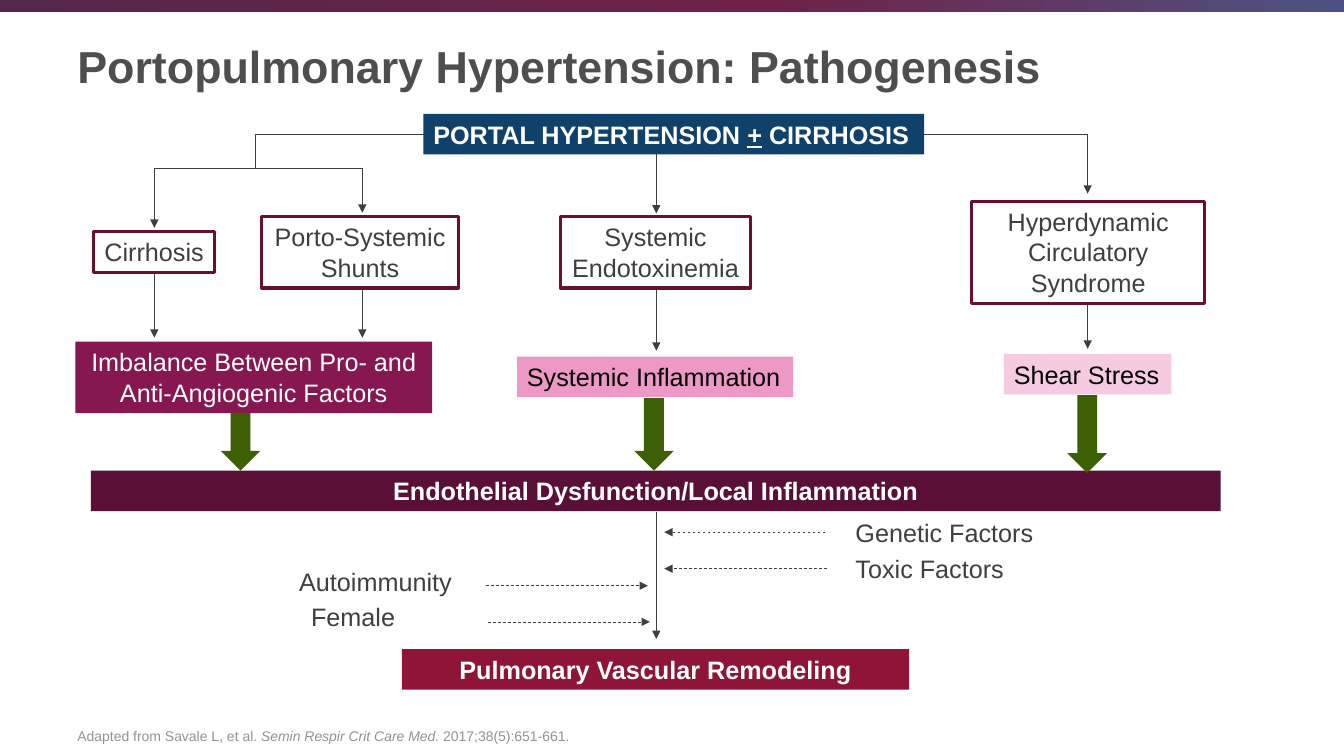
from copy import deepcopy
from pptx import Presentation
from pptx.dml.color import RGBColor
from pptx.enum.dml import MSO_LINE
from pptx.enum.shapes import MSO_CONNECTOR, MSO_SHAPE
from pptx.enum.text import MSO_ANCHOR, PP_ALIGN
from pptx.oxml.ns import qn
from pptx.util import Cm, Pt
from lxml.etree import SubElement

HUES = {
    "white": "FFFFFF", "black": "000000", "title": "4D4E4D", "text": "3F3F3F",
    "note": "939393", "frame": "6B1029", "navy": "10416A", "plum": "861751",
    "pink": "EE98C5", "pale": "F6CBE2", "wine": "590F36", "red": "8E1537",
    "green": "3E6004", "bar1": "54284B", "bar2": "6F2147", "bar3": "4D5282",
}
RGB = {name: RGBColor.from_string(code) for name, code in HUES.items()}

deck = Presentation()
deck.slide_width, deck.slide_height = Cm(33.87), Cm(19.05)
slide = deck.slides.add_slide(deck.slide_layouts[6])
shapes = slide.shapes


def write(text, at, size=18, color="text", bold=False, fill=None, frame=None,
          center=False, wrap=True, anchor=MSO_ANCHOR.TOP):
    """Text is a string, or a list of (words, style) with style "", "i" or "u"."""
    area = [Cm(n) for n in at]
    if fill or frame:
        box = shapes.add_shape(MSO_SHAPE.RECTANGLE, *area)
        box.shadow.inherit = False
    else:
        box = shapes.add_textbox(*area)
    if fill:
        box.fill.solid()
        box.fill.fore_color.rgb = RGB[fill]
    else:
        box.fill.background()
    if frame:
        box.line.color.rgb = RGB[frame]
        box.line.width = Pt(2.25)
    else:
        box.line.fill.background()
    body = box.text_frame
    body.word_wrap = wrap
    body.vertical_anchor = anchor
    para = body.paragraphs[0]
    para.alignment = PP_ALIGN.CENTER if center else PP_ALIGN.LEFT
    for words, style in [(text, "")] if isinstance(text, str) else text:
        run = para.add_run()
        run.text = words
        font = run.font
        font.name, font.size, font.bold = "Arial", Pt(size), bold
        font.italic, font.underline = style == "i", style == "u"
        font.color.rgb = RGB[color]


def link(x1, y1, x2, y2, head=True, dash=False):
    line = shapes.add_connector(MSO_CONNECTOR.STRAIGHT, Cm(x1), Cm(y1), Cm(x2), Cm(y2))
    line.line.color.rgb = RGB["text"]
    line.line.width = Pt(0.5)
    if dash:
        line.line.dash_style = MSO_LINE.DASH
    props = line._element.spPr
    if head:
        SubElement(props.find(qn("a:ln")), qn("a:tailEnd"), type="triangle")
    SubElement(props, qn("a:effectLst"))


# Top bar with three gradient stops
bar = shapes.add_shape(MSO_SHAPE.RECTANGLE, 0, 0, deck.slide_width, Cm(0.3))
bar.shadow.inherit = False
bar.line.fill.background()
bar.fill.gradient()
bar.fill.gradient_angle = 0
stops = bar._element.spPr.find(qn("a:gradFill")).find(qn("a:gsLst"))
stops.insert(1, deepcopy(stops[0]))
for stop, name, place in zip(bar.fill.gradient_stops, ("bar1", "bar2", "bar3"), (0, 0.57, 1)):
    stop.color.rgb = RGB[name]
    stop.position = place

# Title
write("Portopulmonary Hypertension: Pathogenesis", (1.7, 0.56, 29.85, 2.18),
      size=32, color="title", bold=True, anchor=MSO_ANCHOR.MIDDLE)

# Branches from the top box: column centers and shared heights
LEFT, SHUNT, MID, RIGHT, FORK = 3.89, 9.13, 16.54, 27.41, 6.43
TOP, SPLIT, ROW = 3.38, 4.24, 1.02
for ends in [(22.1, TOP, RIGHT, TOP), (10.72, TOP, FORK, TOP),
             (FORK, TOP, FORK, SPLIT), (LEFT, SPLIT, SHUNT, SPLIT)]:
    link(*ends, head=False)

# Downward arrows
for x, start, end in [
    (LEFT, SPLIT, 5.74), (LEFT, 6.88, 8.51),
    (SHUNT, SPLIT, 5.36), (SHUNT, 7.24, 8.51),
    (MID, 3.78, 5.38), (MID, 7.26, 8.84), (MID, 12.9, 16.1),
    (RIGHT, TOP, 4.88), (RIGHT, 7.65, 8.79),
]:
    link(x, start, x, end)

# Top box
write([("PORTAL HYPERTENSION ", ""), ("+", "u"), (" CIRRHOSIS", "")],
      (10.67, 2.87, 12.62, ROW), color="white", bold=True, fill="navy", wrap=False)

# Framed conditions
for text, at, wrap in [
    ("Cirrhosis", (2.36, 5.84, 3.05, ROW), False),
    ("Porto-Systemic Shunts", (6.6, 5.46, 4.95, 1.8), True),
    ("Systemic Endotoxinemia", (14.12, 5.46, 4.8, 1.8), True),
    ("Hyperdynamic Circulatory Syndrome", (24.49, 5.08, 5.87, 2.57), True),
]:
    write(text, at, frame="frame", center=True, wrap=wrap)

# Mechanisms
write("Imbalance Between Pro- and Anti-Angiogenic Factors", (1.9, 8.61, 8.99, 1.8),
      color="white", fill="plum", center=True)
write("Systemic Inflammation", (13.03, 8.99, 6.96, ROW),
      color="black", fill="pink", wrap=False)
write("Shear Stress", (25.3, 8.92, 4.22, ROW), color="black", fill="pale", wrap=False)

# Outcome bands
for text, at, fill in [
    ("Endothelial Dysfunction/Local Inflammation", (2.29, 11.86, 28.47, ROW), "wine"),
    ("Pulmonary Vascular Remodeling", (10.13, 16.36, 12.78, ROW), "red"),
]:
    write(text, at, color="white", bold=True, fill=fill, center=True)

# Factors with dashed arrows
for text, x, y, width, start, end, level in [
    ("Genetic Factors", 21.31, 12.9, 5.03, 20.8, 16.74, 13.41),
    ("Toxic Factors", 21.31, 13.82, 4.29, 20.83, 16.74, 14.33),
    ("Autoimmunity", 7.29, 14.15, 4.39, 12.24, 16.33, 14.76),
    ("Female", 7.59, 15.04, 2.82, 12.29, 16.38, 15.67),
]:
    write(text, (x, y, width, ROW), wrap=False)
    link(start, level, end, level, dash=True)

# Green block arrows
for x, y, height in [(5.56, 10.41, 1.45), (15.98, 10.03, 1.83), (26.9, 9.96, 1.96)]:
    arrow = shapes.add_shape(MSO_SHAPE.DOWN_ARROW, Cm(x), Cm(y), Cm(1), Cm(height))
    arrow.shadow.inherit = False
    arrow.fill.solid()
    arrow.fill.fore_color.rgb = RGB["green"]
    arrow.line.fill.background()

# Citation
write([("Adapted from Savale L, et al. ", ""), ("Semin Respir Crit Care Med. ", "i"),
       ("2017;38(5):651-661.", "")], (1.7, 17.65, 29.85, 1.22),
      size=10, color="note", anchor=MSO_ANCHOR.BOTTOM)

deck.save("out.pptx")
